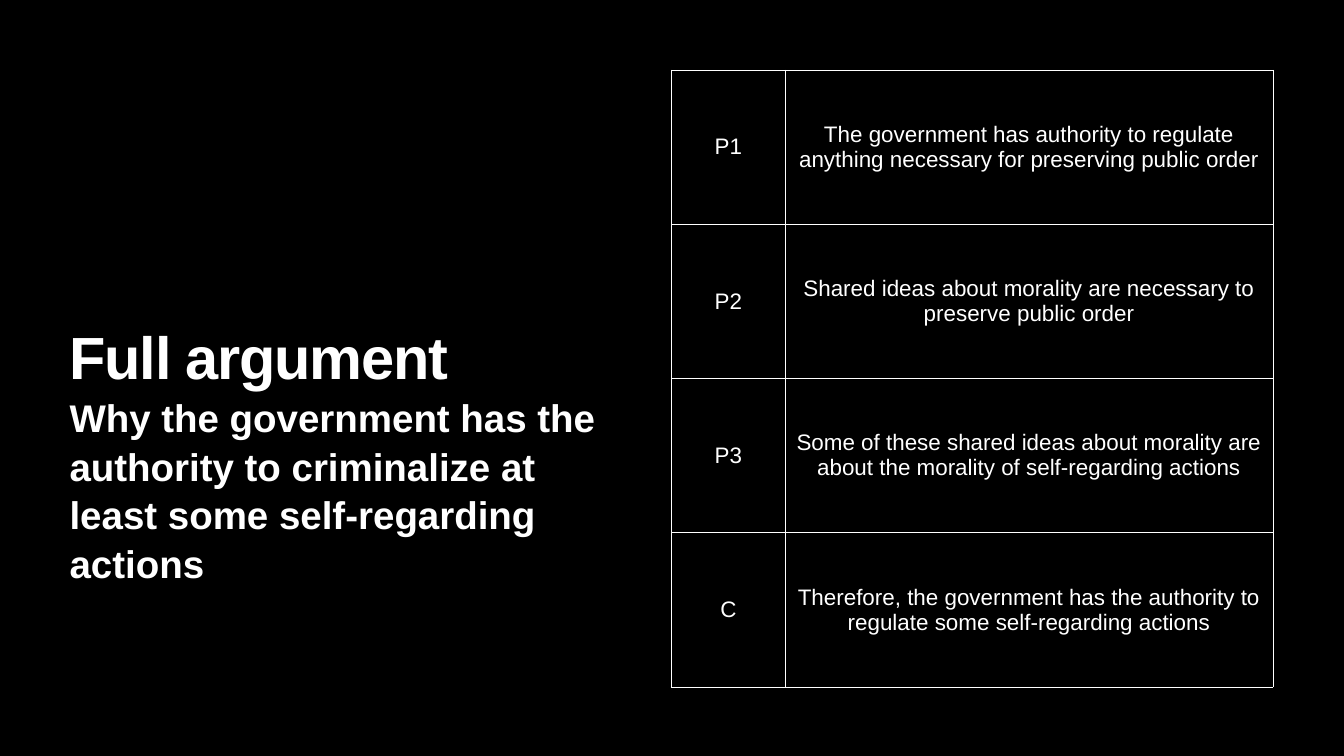
from lxml import etree
from pptx import Presentation
from pptx.dml.color import RGBColor
from pptx.enum.text import MSO_ANCHOR, MSO_AUTO_SIZE, PP_ALIGN
from pptx.oxml.ns import qn
from pptx.util import Inches, Pt

LEFT, CENTER = PP_ALIGN.LEFT, PP_ALIGN.CENTER
TOP, MIDDLE, BOTTOM = MSO_ANCHOR.TOP, MSO_ANCHOR.MIDDLE, MSO_ANCHOR.BOTTOM
NO_AUTOFIT = MSO_AUTO_SIZE.NONE
SECTION_HEADER = 2

FONT = "Arial"
BLACK, WHITE = "000000", "FFFFFF"
INSET = Inches(0.06)

ARGUMENT = [
    ("P1", "The government has authority to regulate anything necessary "
           "for preserving public order"),
    ("P2", "Shared ideas about morality are necessary to preserve public order"),
    ("P3", "Some of these shared ideas about morality are about the morality "
           "of self-regarding actions"),
    ("C", "Therefore, the government has the authority to regulate some "
          "self-regarding actions"),
]
COL_WIDTHS = [2.25, 9.68]
ROW_HEIGHT = 3.06


def rgb(value):
    return RGBColor.from_string(value)


def write(tf, text, size, bold=False, align=LEFT, line_spacing=1.0, tracking=0):
    """Fill a text frame with one paragraph; tracking is in points."""
    p = tf.paragraphs[0]
    p.alignment = align
    p.line_spacing = line_spacing
    p.space_before = Pt(0)
    r = p.add_run()
    r.text = text
    r.font.name = FONT
    r.font.size = Pt(size)
    r.font.bold = bold
    r.font.color.rgb = rgb(WHITE)
    rPr = r.font._element
    rPr.set("cap", "none")
    rPr.set("spc", str(round(tracking * 100)))


def set_margins(target):
    """Give a text frame or a table cell the same inset on every side."""
    target.margin_left = target.margin_right = INSET
    target.margin_top = target.margin_bottom = INSET


def fill_placeholder(sp, box, text, anchor, **text_format):
    sp.left, sp.top, sp.width, sp.height = (Inches(v) for v in box)
    tf = sp.text_frame
    tf.word_wrap = True
    tf.auto_size = NO_AUTOFIT
    tf.vertical_anchor = anchor
    set_margins(tf)
    write(tf, text, **text_format)


def add_borders(cell, color, width):
    tcPr = cell._tc.get_or_add_tcPr()
    for side in ("lnL", "lnR", "lnT", "lnB"):
        ln = etree.SubElement(tcPr, qn(f"a:{side}"), w=str(Pt(width)))
        fill = etree.SubElement(ln, qn("a:solidFill"))
        etree.SubElement(fill, qn("a:srgbClr"), val=color)


def add_argument_table(s, left, top):
    frame = s.shapes.add_table(
        len(ARGUMENT), len(COL_WIDTHS), Inches(left), Inches(top),
        Inches(sum(COL_WIDTHS)), Inches(ROW_HEIGHT * len(ARGUMENT)))
    table = frame.table
    table.first_row = table.horz_banding = False
    for column, width in zip(table.columns, COL_WIDTHS):
        column.width = Inches(width)
    for row, texts in zip(table.rows, ARGUMENT):
        row.height = Inches(ROW_HEIGHT)
        for cell, text in zip(row.cells, texts):
            add_borders(cell, WHITE, 1)
            cell.fill.background()
            cell.vertical_anchor = MIDDLE
            set_margins(cell)
            write(cell.text_frame, text, size=32, align=CENTER)


def main():
    prs = Presentation()
    prs.slide_width, prs.slide_height = Inches(26.67), Inches(15)
    s = prs.slides.add_slide(prs.slide_layouts[SECTION_HEADER])
    s.background.fill.solid()
    s.background.fill.fore_color.rgb = rgb(BLACK)

    add_argument_table(s, 13.33, 1.39)
    fill_placeholder(s.shapes.title, (1.32, 1.39, 10.69, 6.43),
                     "Full argument", BOTTOM,
                     size=85, bold=True, line_spacing=0.8, tracking=-1.7)
    fill_placeholder(s.placeholders[1], (1.32, 7.72, 10.69, 5.89),
                     "Why the government has the authority to criminalize "
                     "at least some self-regarding actions", TOP,
                     size=55, bold=True, line_spacing=1.05)
    prs.save("out.pptx")


if __name__ == "__main__":
    main()
